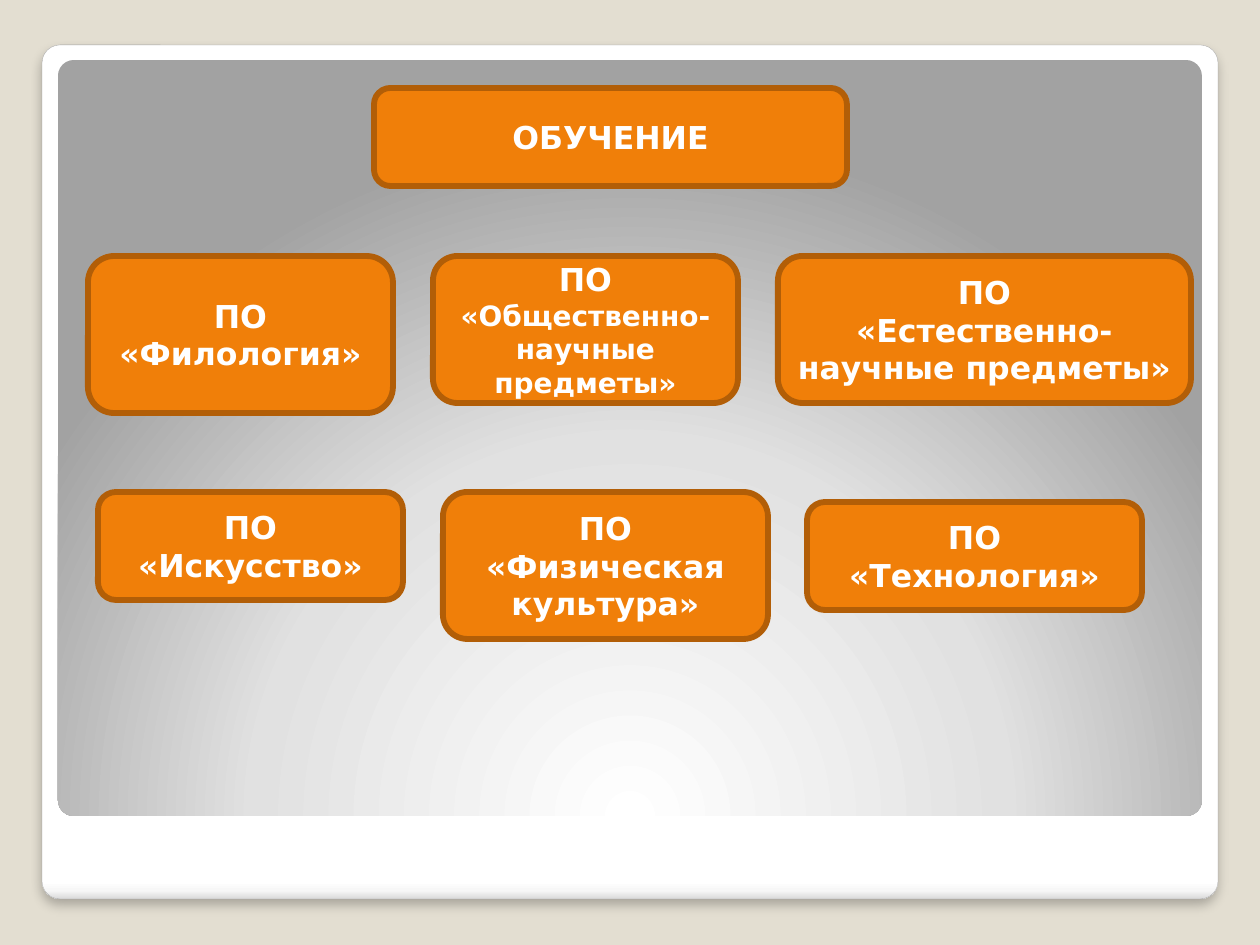
from pptx import Presentation
from pptx.dml.color import RGBColor
from pptx.enum.shapes import MSO_SHAPE
from pptx.enum.text import MSO_ANCHOR, PP_ALIGN
from pptx.oxml import parse_xml
from pptx.oxml.ns import nsdecls
from pptx.util import Emu, Pt

ROUND = MSO_SHAPE.ROUNDED_RECTANGLE
MIDDLE = MSO_ANCHOR.MIDDLE
CENTER = PP_ALIGN.CENTER
PX = 914400 / 126
rgb = RGBColor.from_string


def add_box(x, y, w, h):
    """Add a rounded box, in px, with no shadow."""
    box = slide.shapes.add_shape(ROUND, *(Emu(round(n * PX)) for n in (x, y, w, h)))
    box.shadow.inherit = False
    return box


def set_grad(box, stops, shade):
    """Fill with (percent, colour) stops; shade is the a:lin or a:path XML."""
    marks = "".join(
        f'<a:gs pos="{pos * 1000}"><a:srgbClr val="{color}"/></a:gs>'
        for pos, color in stops
    )
    box.fill.background()
    props = box._element.spPr
    old = props.find("{*}noFill")
    props.replace(old, parse_xml(
        f'<a:gradFill {nsdecls("a")} rotWithShape="1">'
        f"<a:gsLst>{marks}</a:gsLst>{shade}</a:gradFill>"
    ))


deck = Presentation()
deck.slide_width = Emu(round(1260 * PX))
deck.slide_height = Emu(round(945 * PX))
slide = deck.slides.add_slide(deck.slide_layouts[6])
slide.background.fill.solid()
slide.background.fill.fore_color.rgb = rgb("E3DED1")

# White frame with a soft shadow below
frame = add_box(42, 45, 1176, 854)
frame.adjustments[0] = 0.021
set_grad(frame, [(0, "FFFFFF"), (98, "FFFFFF"), (99, "F7F7F7"), (100, "DADADA")],
         '<a:lin ang="5400000" scaled="0"/>')
frame.line.color.rgb = rgb("A4A4A4")
frame.line.width = Pt(0.16)
frame._element.spPr.find("{*}effectLst").append(parse_xml(
    f'<a:outerShdw {nsdecls("a")} blurRad="{Pt(6)}" dist="{Pt(4)}" dir="5400000" '
    'algn="t" rotWithShape="0"><a:srgbClr val="000000"><a:alpha val="25000"/>'
    "</a:srgbClr></a:outerShdw>"
))

# Grey panel lit from the bottom
panel = add_box(58, 60, 1144, 756)
panel.adjustments[0] = 0.021
set_grad(panel, [(0, "FFFFFF"), (55, "E1E1E1"), (100, "A2A2A2")],
         '<a:path path="circle"><a:fillToRect l="50000" t="175000" '
         'r="50000" b="-75000"/></a:path>')
panel.line.fill.background()

# Title and subject areas: x, y, w, h, then (text, size) paragraphs
topics = [
    (374, 88, 473, 98, [("ОБУЧЕНИЕ", 18)]),
    (88, 256, 305, 157, [("ПО «Филология»", 18)]),
    (98, 492, 305, 108, [("ПО «Искусство»", 18)]),
    (443, 492, 325, 147, [("ПО «Физическая культура»", 18)]),
    (433, 256, 305, 147, [("ПО", 18), ("«Общественно-научные предметы»", 16)]),
    (778, 256, 413, 147, [("ПО", 18), ("«Естественно-научные предметы»", 18)]),
    (807, 502, 335, 108, [("ПО «Технология»", 18)]),
]
for x, y, w, h, lines in topics:
    box = add_box(x, y, w, h)
    box.fill.solid()
    box.fill.fore_color.rgb = rgb("F07F09")
    box.line.color.rgb = rgb("B25E07")
    box.line.width = Pt(3.35)
    frame = box.text_frame
    frame.word_wrap = True
    frame.vertical_anchor = MIDDLE
    for i, (text, size) in enumerate(lines):
        para = frame.add_paragraph() if i else frame.paragraphs[0]
        para.alignment = CENTER
        run = para.add_run()
        run.text = text
        run.font.color.rgb = rgb("FFFFFF")
        for name, value in {"name": "DejaVu Sans", "size": Pt(size), "bold": True}.items():
            setattr(run.font, name, value)

deck.save("out.pptx")
